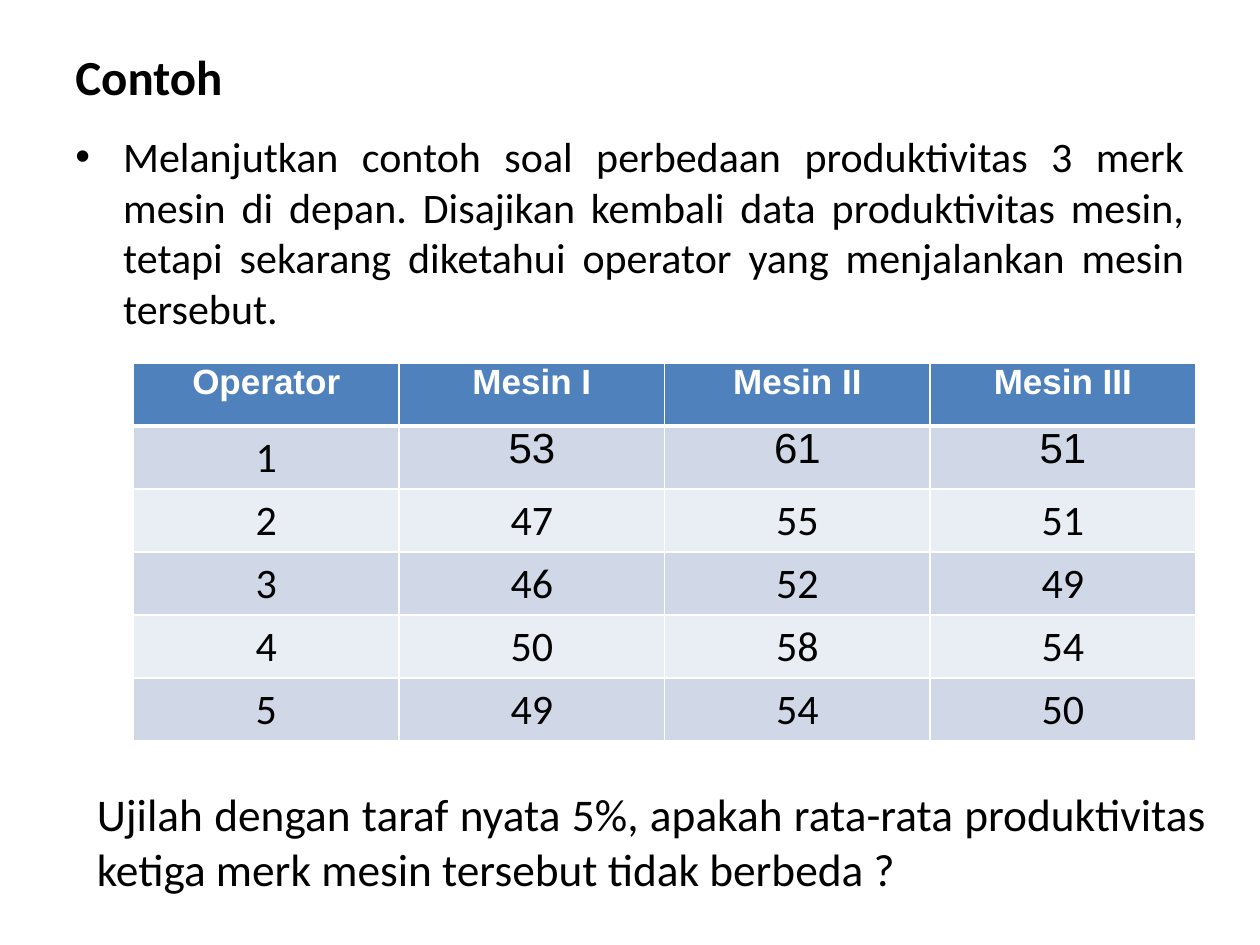
import pptx
import pptx.util
import pptx.dml.color
import pptx.enum.text
import pptx.oxml
import lxml.etree
from pptx.util import Inches

ALIGN = pptx.enum.text.PP_ALIGN
ANCHOR = pptx.enum.text.MSO_ANCHOR
NAMESPACE = 'xmlns:a="http://schemas.openxmlformats.org/drawingml/2006/main"'


def color(value):
    return pptx.dml.color.RGBColor.from_string(value)


def write(frame, text, align, size, name="Calibri", bold=False, ink="000000"):
    """Put one formatted run in the frame's first paragraph and return the paragraph."""
    para = frame.paragraphs[0]
    para.alignment = align
    span = para.add_run()
    span.text = text
    for key, value in {"size": pptx.util.Pt(size), "name": name, "bold": bold}.items():
        setattr(span.font, key, value)
    span.font.color.rgb = color(ink)
    return para


deck = pptx.Presentation()
deck.slide_width, deck.slide_height = Inches(10), Inches(7.5)
page = deck.slides.add_slide(deck.slide_layouts[6])

# Title, introduction and question
texts = [
    ("Contoh", (0.5, 0.3, 9, 0.61), ANCHOR.MIDDLE, ALIGN.LEFT, 28, True),
    ("Melanjutkan contoh soal perbedaan produktivitas 3 merk mesin di depan. "
     "Disajikan kembali data produktivitas mesin, tetapi sekarang diketahui "
     "operator yang menjalankan mesin tersebut.",
     (0.5, 0.99, 9, 1.8), ANCHOR.TOP, ALIGN.JUSTIFY, 24, False),
    ("Ujilah dengan taraf nyata 5%, apakah rata-rata produktivitas ketiga merk "
     "mesin tersebut tidak berbeda ?",
     (0.67, 6.21, 9, 0.93), ANCHOR.MIDDLE, ALIGN.JUSTIFY, 25.9, False),
]
paragraphs = []
for text, place, anchor, align, size, bold in texts:
    box = page.shapes.add_textbox(*map(Inches, place))
    box.text_frame.word_wrap = True
    box.text_frame.vertical_anchor = anchor
    paragraphs.append(write(box.text_frame, text, align, size, bold=bold))

# Bullet with a hanging indent on the introduction
properties = paragraphs[1]._p.get_or_add_pPr()
properties.set("marL", str(Inches(0.38)))
properties.set("indent", str(Inches(-0.38)))
for bullet in ('<a:buFont {} typeface="Arial"/>', '<a:buChar {} char="•"/>'):
    properties.append(pptx.oxml.parse_xml(bullet.format(NAMESPACE)))

# Productivity by operator and machine
rows = [
    ("Operator", "Mesin I", "Mesin II", "Mesin III"),
    (1, 53, 61, 51),
    (2, 47, 55, 51),
    (3, 46, 52, 49),
    (4, 50, 58, 54),
    (5, 49, 54, 50),
]
tight_margins = {"margin_left": 0.07, "margin_right": 0.07, "margin_top": 0, "margin_bottom": 0}
table = page.shapes.add_table(
    len(rows), len(rows[0]), Inches(1.06), Inches(2.88), Inches(8.43), Inches(3)).table

for row_index, row in enumerate(rows):
    for column_index, value in enumerate(row):
        cell = table.cell(row_index, column_index)
        header = row_index == 0
        tight = header or (row_index == 1 and column_index > 0)
        if tight:
            for key, margin in tight_margins.items():
                setattr(cell, key, Inches(margin))
        write(cell.text_frame, str(value), ALIGN.CENTER, 20 if header else 24,
              "Arial" if tight else "Calibri", header, "FFFFFF" if header else "000000")

        thick_edge = {0: "lnB", 1: "lnT"}.get(row_index)
        for edge in ("lnL", "lnR", "lnT", "lnB"):
            width = pptx.util.Pt(3 if edge == thick_edge else 1)
            cell._tc.get_or_add_tcPr().append(pptx.oxml.parse_xml(
                f'<a:{edge} {NAMESPACE} w="{width}"><a:solidFill>'
                f'<a:srgbClr val="FFFFFF"/></a:solidFill></a:{edge}>'))
        cell.fill.solid()
        band = "D0D8E8" if row_index % 2 else "E9EDF4"
        cell.fill.fore_color.rgb = color("4F81BD" if header else band)

deck.save("out.pptx")
